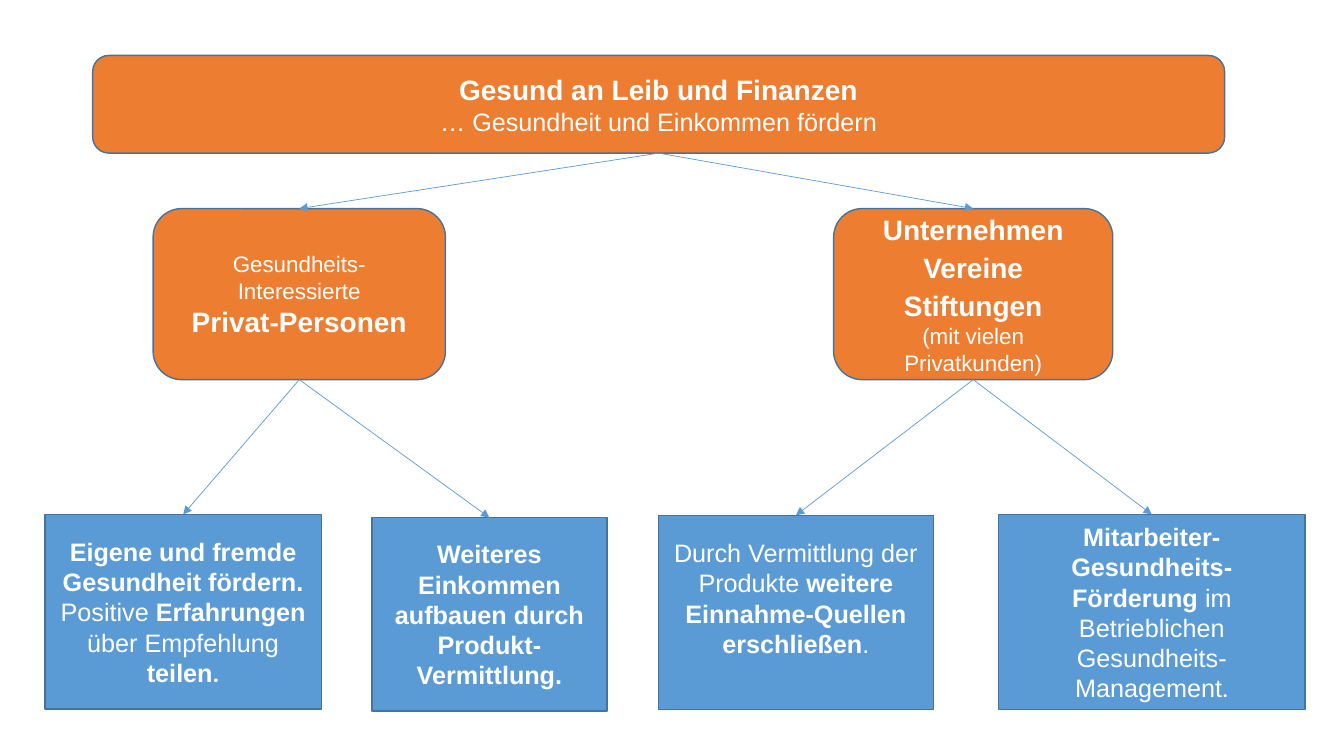
"""Build the tree slide on promoting health and income."""
from dataclasses import dataclass

from lxml.etree import SubElement
from pptx import Presentation
from pptx.dml.color import RGBColor
from pptx.enum.shapes import MSO_CONNECTOR, MSO_SHAPE
from pptx.enum.text import MSO_ANCHOR, PP_ALIGN
from pptx.oxml.ns import qn
from pptx.util import Pt


@dataclass(frozen=True)
class Theme:
    """Colours, fonts and type sizes."""
    orange: RGBColor = RGBColor(0xED, 0x7D, 0x31)
    blue: RGBColor = RGBColor(0x5B, 0x9B, 0xD5)
    outline: RGBColor = RGBColor(0x43, 0x73, 0x9E)
    white: RGBColor = RGBColor(0xFF, 0xFF, 0xFF)
    font: str = "Arial"
    stop_font: str = "Calibri"
    large: int = 20
    medium: int = 18
    small: int = 16


T = Theme()
L, M, S = T.large, T.medium, T.small
TOP, LEAF_TOP = 149, 367.5
LINE = 20.7

GROUPS = {
    "root": (66.2, 39.6, 808.6, 69.8),
    "private": (109.4, TOP, 208.8, 122.2),
    "firms": (595.5, TOP, 199.4, 122.2),
}
LEAVES = {
    "share": (32.2, LEAF_TOP, 197.3, 138.8),
    "income": (265.6, 369.7, 168, 138.2),
    "sources": (470.2, 368.1, 196.6, 138.8),
    "staff": (713.3, LEAF_TOP, 218.9, 139.5),
}
TEXTS = {
    "root": [[("Gesund an Leib und Finanzen\n", L, True),
              ("… Gesundheit und Einkommen fördern", M, False)]],
    "private": [[("Gesundheits-Interessierte", S, False)],
                [("Privat-Personen", L, True)]],
    "firms": [[("Unternehmen", L, True)],
              [("Vereine", L, True)],
              [("Stiftungen\n", L, True), ("(mit vielen Privatkunden)", S, False)]],
    "share": [[("Eigene und fremde Gesundheit fördern. ", M, True),
               ("Positive ", M, False), ("Erfahrungen", M, True),
               (" über Empfehlung ", M, False), ("teilen", M, True),
               (".", M, True, T.stop_font)]],
    "income": [[("Weiteres Einkommen aufbauen durch Produkt-Vermittlung.", M, True)]],
    "sources": [[("Durch Vermittlung der Produkte ", M, False),
                 ("weitere Einnahme-Quellen erschließen", M, True), (".", M, False)]],
    "staff": [[("Mitarbeiter-Gesundheits-Förderung", M, True),
               (" im Betrieblichen Gesundheits-Management", M, False),
               (".", M, False, T.stop_font)]],
}
SPACE_BEFORE = {"firms": 3}
EXTRA_BOTTOM = {"sources": LINE}
CHILDREN = {
    "root": ("private", "firms"),
    "private": ("share", "income"),
    "firms": ("sources", "staff"),
}


def add_run(p, text, size, bold, font=T.font):
    r = p.add_run()
    r.text = text.rstrip("\n")
    r.font.size, r.font.bold, r.font.name = Pt(size), bold, font
    r.font.color.rgb = T.white
    if text.endswith("\n"):
        p.add_line_break()


def add_box(s, name, box, kind, fill):
    sp = s.shapes.add_shape(kind, *map(Pt, box))
    sp.shadow.inherit = False
    sp.fill.solid()
    sp.fill.fore_color.rgb = fill
    sp.line.color.rgb = T.outline
    sp.line.width = Pt(1)
    tf = sp.text_frame
    tf.word_wrap = True
    tf.vertical_anchor = MSO_ANCHOR.MIDDLE
    tf.margin_bottom = Pt(3.6 + EXTRA_BOTTOM.get(name, 0))
    for i, runs in enumerate(TEXTS[name]):
        p = tf.add_paragraph() if i else tf.paragraphs[0]
        p.alignment = PP_ALIGN.CENTER
        p.space_before = Pt(SPACE_BEFORE.get(name, 0))
        for run in runs:
            add_run(p, *run)
    return sp


def add_arrow(s, parent, child):
    c = s.shapes.add_connector(
        MSO_CONNECTOR.STRAIGHT,
        parent.left + parent.width // 2, parent.top + parent.height,
        child.left + child.width // 2, child.top)
    c.begin_connect(parent, 2)
    c.end_connect(child, 0)
    c.line.color.rgb = T.blue
    c.line.width = Pt(0.5)
    SubElement(c.line._get_or_add_ln(), qn("a:tailEnd"), type="triangle")
    SubElement(c._element.spPr, qn("a:effectLst"))


def main():
    prs = Presentation()
    prs.slide_width, prs.slide_height = Pt(960), Pt(540)
    s = prs.slides.add_slide(prs.slide_layouts[6])
    shapes = {}
    for boxes, kind, fill in ((GROUPS, MSO_SHAPE.ROUNDED_RECTANGLE, T.orange),
                              (LEAVES, MSO_SHAPE.RECTANGLE, T.blue)):
        for name, box in boxes.items():
            shapes[name] = add_box(s, name, box, kind, fill)
    for parent, children in CHILDREN.items():
        for child in children:
            add_arrow(s, shapes[parent], shapes[child])
    prs.save("out.pptx")


if __name__ == "__main__":
    main()
